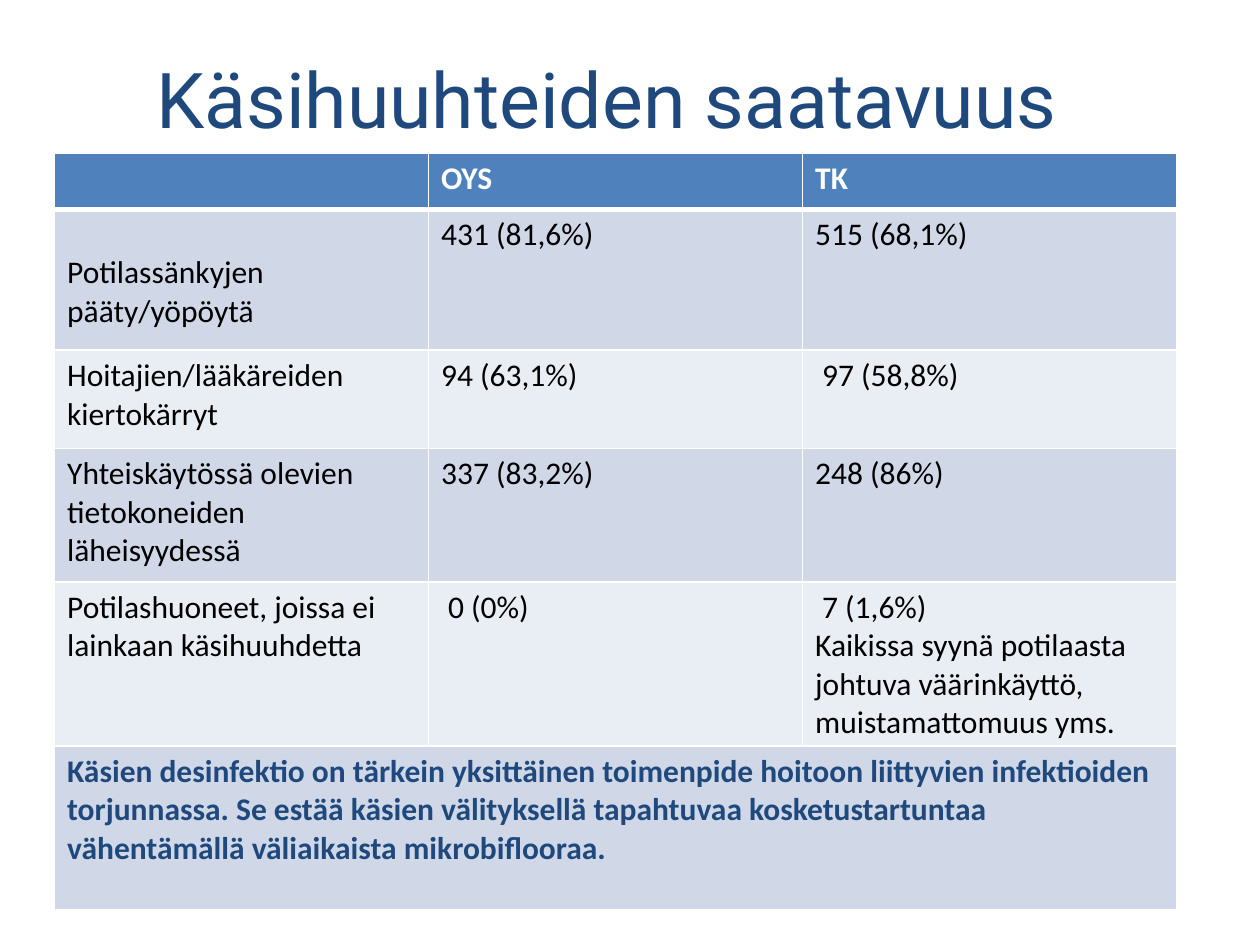
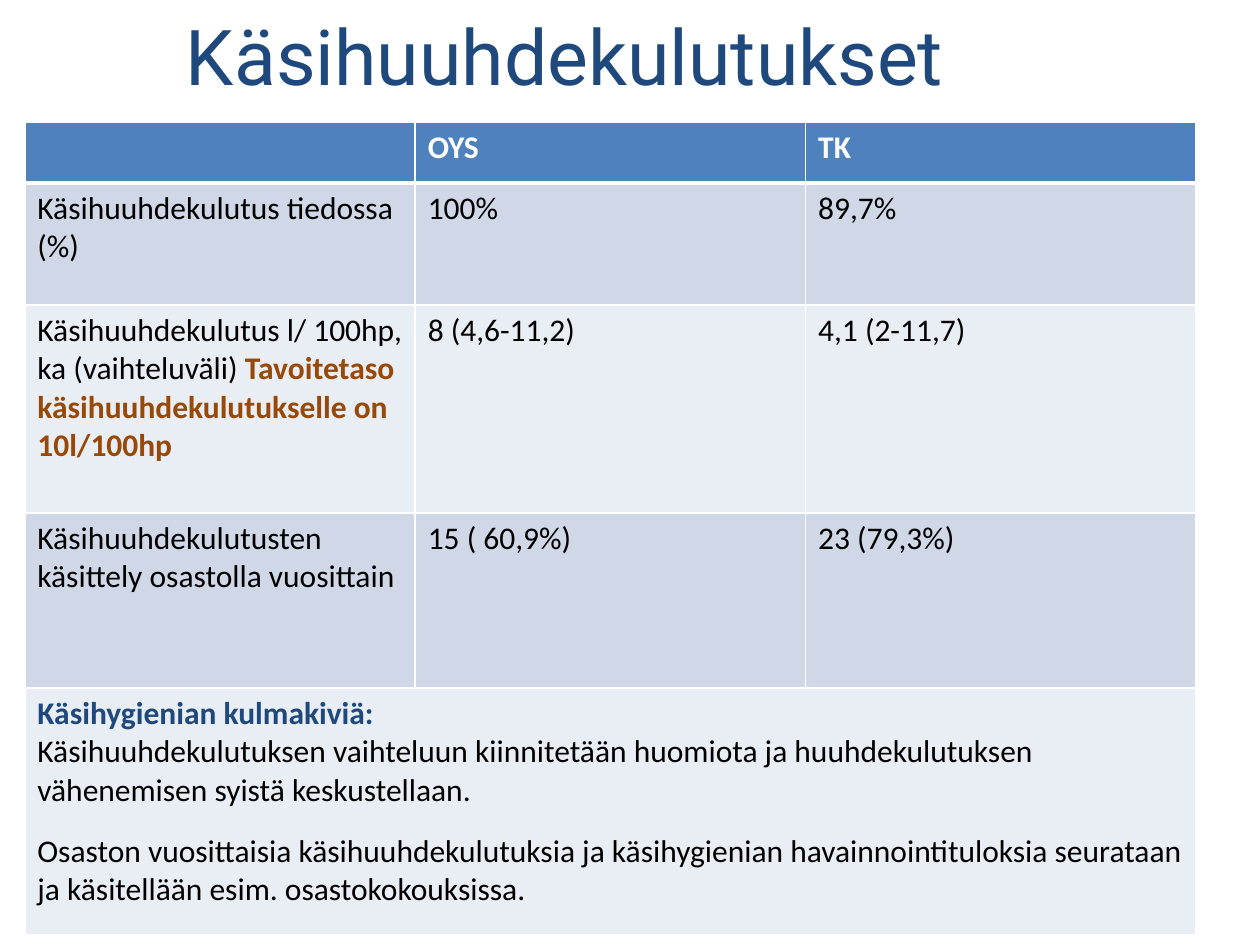
import dataclasses
import typing

import pptx
import pptx.dml.color
import pptx.oxml
import pptx.oxml.ns
import pptx.presentation
import pptx.slide
import pptx.table
import pptx.text.text
import pptx.util

Cm = pptx.util.Cm
Pt = pptx.util.Pt

COLOURS = {
    "navy": "1F497D",
    "header": "4F81BD",
    "dark band": "D0D8E8",
    "light band": "E9EDF4",
    "white": "FFFFFF",
    "black": "000000",
    "brown": "984807",
}

FONTS = {
    "title": {"name": "Roboto", "size": Pt(44), "bold": False},
    "body": {"name": "Calibri", "size": Pt(18), "bold": False},
    "strong": {"name": "Calibri", "size": Pt(18), "bold": True},
}

SPACE_WIDTH = Cm(0.14)
COLUMN_COUNT = 3


@dataclasses.dataclass(frozen=True)
class Run:
    text: str
    font: str = "body"
    colour: str = "black"


@dataclasses.dataclass(frozen=True)
class Line:
    runs: tuple[Run, ...]
    indent: int = 0
    space_before: int = 0


@dataclasses.dataclass(frozen=True)
class CellText:
    lines: tuple[Line, ...]
    margin_top: int = Cm(0.13)


@dataclasses.dataclass(frozen=True)
class Row:
    """A table row; a single cell spans all columns."""
    height: float
    cells: tuple[CellText, ...]


@dataclasses.dataclass(frozen=True)
class TableSlide:
    title: str
    title_box: tuple[float, float, float, float]
    table_left: float
    table_top: float
    column_width: float
    rows: tuple[Row, ...]


def plain(text: str, indent: int = 0, **cell_options: typing.Any) -> CellText:
    return CellText((Line((Run(text),), indent),), **cell_options)


def header_row(height: float) -> Row:
    labels = ("", "OYS", "TK")
    return Row(height, tuple(
        CellText((Line((Run(label, "strong", "white"),)),)) for label in labels))


def rgb(colour: str) -> pptx.dml.color.RGBColor:
    return pptx.dml.color.RGBColor.from_string(COLOURS[colour])


def write_lines(text_frame: pptx.text.text.TextFrame, lines: tuple[Line, ...]) -> None:
    for index, line in enumerate(lines):
        paragraph = text_frame.add_paragraph() if index else text_frame.paragraphs[0]
        if line.indent:
            paragraph._p.get_or_add_pPr().set("marL", str(line.indent))
        if line.space_before:
            paragraph.space_before = line.space_before
        for run in line.runs:
            if not run.text:
                continue
            text_run = paragraph.add_run()
            text_run.text = run.text
            for attribute, value in FONTS[run.font].items():
                setattr(text_run.font, attribute, value)
            text_run.font.color.rgb = rgb(run.colour)


def add_borders(cell: pptx.table._Cell, widths: dict[str, int]) -> None:
    """Draw white borders; widths maps L, R, T, B, in that order, to points."""
    properties = cell._tc.get_or_add_tcPr()
    for position, (side, width) in enumerate(widths.items()):
        border = pptx.oxml.parse_xml(
            f'<a:ln{side} {pptx.oxml.ns.nsdecls("a")} w="{Pt(width)}"><a:solidFill>'
            f'<a:srgbClr val="{COLOURS["white"]}"/></a:solidFill></a:ln{side}>')
        properties.insert(position, border)


def add_title(slide: pptx.slide.Slide, content: TableSlide) -> None:
    box = slide.shapes.add_textbox(*(Cm(length) for length in content.title_box))
    box.text_frame.word_wrap = True
    write_lines(box.text_frame, (Line((Run(content.title, "title", "navy"),)),))


def add_banded_table(slide: pptx.slide.Slide, content: TableSlide) -> None:
    table = slide.shapes.add_table(
        len(content.rows), COLUMN_COUNT, Cm(content.table_left), Cm(content.table_top),
        Cm(content.column_width * COLUMN_COUNT),
        Cm(sum(row.height for row in content.rows))).table
    for column in table.columns:
        column.width = Cm(content.column_width)
    for row_index, row in enumerate(content.rows):
        table.rows[row_index].height = Cm(row.height)
        if row_index == 0:
            fill = "header"
        else:
            fill = "dark band" if row_index % 2 else "light band"
        widths = {"L": 1, "R": 1, "T": 3 if row_index == 1 else 1,
                  "B": 3 if row_index == 0 else 1}
        for column_index in range(COLUMN_COUNT):
            cell = table.cell(row_index, column_index)
            cell.fill.solid()
            cell.fill.fore_color.rgb = rgb(fill)
            add_borders(cell, widths)
        if len(row.cells) == 1:
            table.cell(row_index, 0).merge(table.cell(row_index, COLUMN_COUNT - 1))
        for column_index, cell_text in enumerate(row.cells):
            cell = table.cell(row_index, column_index)
            cell.margin_top = cell_text.margin_top
            write_lines(cell.text_frame, cell_text.lines)


AVAILABILITY = TableSlide(
    "Käsihuuhteiden saatavuus", (2.9, 0.91, 19, 2.13), 1.1, 3.08, 7.54, (
        header_row(1.14),
        Row(2.84, (plain("Potilassänkyjen pääty/yöpöytä", margin_top=Cm(0.9)),
                   plain("431 (81,6%)"), plain("515 (68,1%)"))),
        Row(1.98, (plain("Hoitajien/lääkäreiden kiertokärryt"),
                   plain("94 (63,1%)"), plain("97 (58,8%)", SPACE_WIDTH))),
        Row(2.69, (plain("Yhteiskäytössä olevien tietokoneiden läheisyydessä"),
                   plain("337 (83,2%)"), plain("248 (86%)"))),
        Row(3.3, (plain("Potilashuoneet, joissa ei lainkaan käsihuuhdetta"),
                  plain("0 (0%)", SPACE_WIDTH),
                  CellText((
                      Line((Run("7 (1,6%)"),), SPACE_WIDTH),
                      Line((Run("Kaikissa syynä potilaasta johtuva väärinkäyttö, "
                                "muistamattomuus yms."),)))))),
        Row(3.3, (CellText((Line((Run(
            "Käsien desinfektio on tärkein yksittäinen toimenpide hoitoon liittyvien "
            "infektioiden torjunnassa. Se estää käsien välityksellä tapahtuvaa "
            "kosketustartuntaa vähentämällä väliaikaista mikrobiflooraa.",
            "strong", "navy"),)),)),)),
    ))

CONSUMPTION = TableSlide(
    "Käsihuuhdekulutukset", (3.5, 0.05, 19.4, 2.13), 0.5, 2.47, 7.87, (
        header_row(1.22),
        Row(2.46, (plain("Käsihuuhdekulutus tiedossa (%)"),
                   plain("100%"), plain("89,7%"))),
        Row(4.19, (CellText((Line((
            Run("Käsihuuhdekulutus l/ 100hp, ka (vaihteluväli) "),
            Run("Tavoitetaso käsihuuhdekulutukselle on 10l/100hp", "strong", "brown"))),)),
            plain("8 (4,6-11,2)"), plain("4,1 (2-11,7)"))),
        Row(3.53, (plain("Käsihuuhdekulutusten käsittely osastolla vuosittain"),
                   plain("15 ( 60,9%)"), plain("23 (79,3%)"))),
        Row(4.98, (CellText((
            Line((Run("Käsihygienian kulmakiviä:", "strong", "navy"),)),
            Line((Run("Käsihuuhdekulutuksen vaihteluun kiinnitetään huomiota ja "
                      "huuhdekulutuksen vähenemisen syistä keskustellaan."),)),
            Line((Run("Osaston vuosittaisia käsihuuhdekulutuksia ja käsihygienian "
                      "havainnointituloksia seurataan ja käsitellään esim. "
                      "osastokokouksissa."),), space_before=Pt(12.8)))),)),
    ))


def main() -> None:
    presentation = pptx.Presentation()
    presentation.slide_width = Cm(25.4)
    presentation.slide_height = Cm(19.05)
    for content in (AVAILABILITY, CONSUMPTION):
        slide = presentation.slides.add_slide(presentation.slide_layouts[6])
        add_title(slide, content)
        add_banded_table(slide, content)
    presentation.save("out.pptx")


if __name__ == "__main__":
    main()
